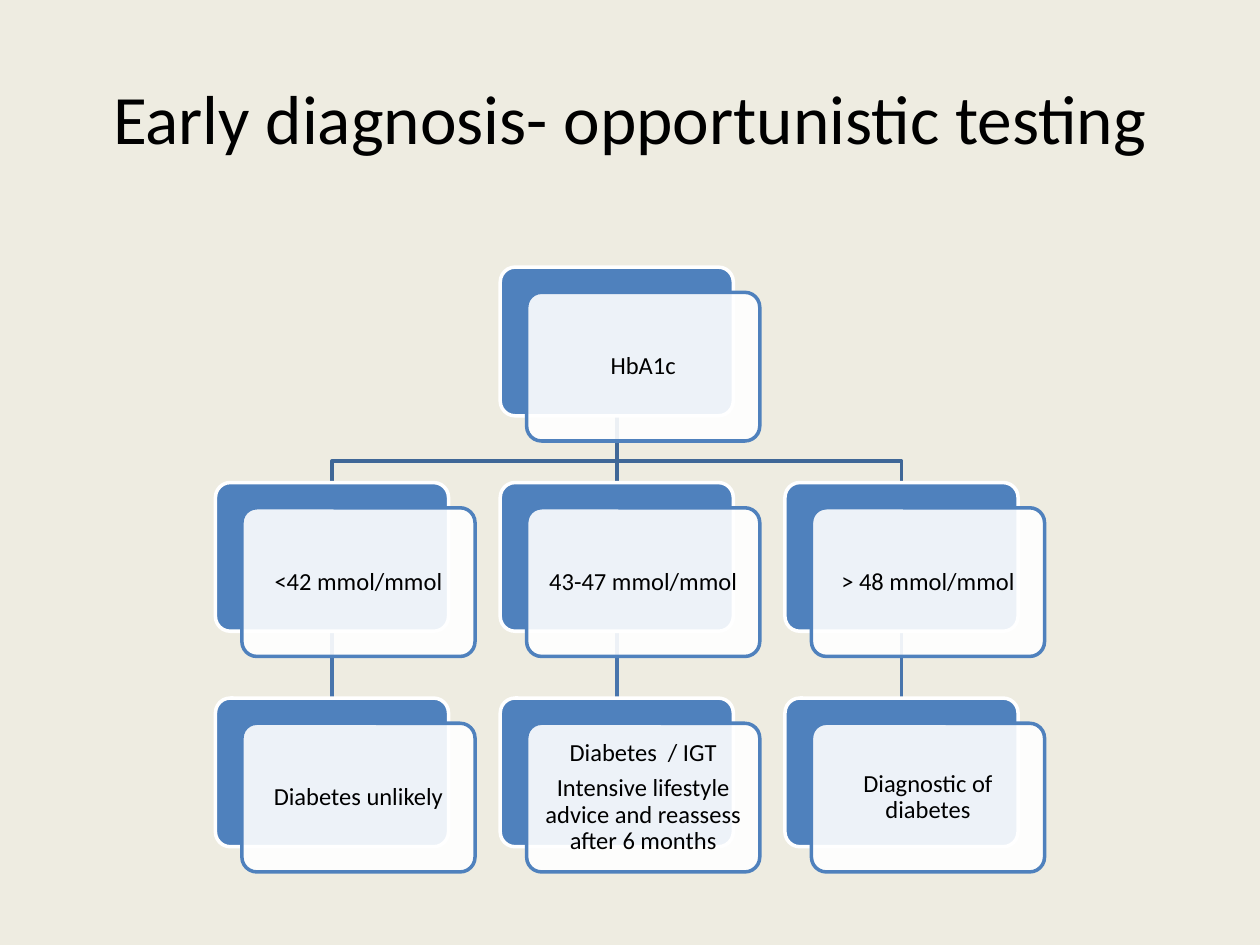
from pptx import Presentation
from pptx.dml.color import RGBColor
from pptx.enum.shapes import MSO_CONNECTOR, MSO_SHAPE
from pptx.enum.text import MSO_ANCHOR, PP_ALIGN
from pptx.oxml.ns import qn
from pptx.util import Inches, Pt
from lxml import etree

ROUNDED = MSO_SHAPE.ROUNDED_RECTANGLE
STRAIGHT = MSO_CONNECTOR.STRAIGHT
MIDDLE = MSO_ANCHOR.MIDDLE
CENTER = PP_ALIGN.CENTER

FONT = "Calibri"
BLUE, WHITE, BLACK = "4F81BD", "FFFFFF", "000000"
ROOT_LINE, BRANCH_LINE = "3F6797", "4875AC"

# Tree grid, in inches
COL_STEP, ROW_STEP = 2.26, 1.71
CARD_W, CARD_H = 1.85, 1.18
SHIFT_X, SHIFT_Y = 0.21, 0.2
BEND = 0.17  # from the horizontal run down to the child card

ROOT = ["HbA1c"]
BRANCHES = [
    (["<42 mmol/mmol"], ["Diabetes unlikely"]),
    (["43-47 mmol/mmol"],
     ["Diabetes  / IGT",
      "Intensive lifestyle advice and reassess after 6 months"]),
    (["> 48 mmol/mmol"], ["Diagnostic of diabetes"]),
]


def color(value):
    return RGBColor.from_string(value)


def set_line(shape, value):
    shape.line.color.rgb = color(value)
    shape.line.width = Pt(2)


def write(shape, paragraphs, size, inset):
    tf = shape.text_frame
    tf.word_wrap = True
    tf.vertical_anchor = MIDDLE
    tf.margin_left = tf.margin_right = Inches(inset)
    tf.margin_top = tf.margin_bottom = Inches(inset)
    tf.text = "\n".join(paragraphs)
    for p in tf.paragraphs:
        p.alignment = CENTER
        font = p.runs[0].font
        font.name, font.size = FONT, Pt(size)
        font.color.rgb = color(BLACK)


def add_title(s, x, y, w, h):
    box = s.shapes.add_textbox(Inches(x), Inches(y), Inches(w), Inches(h))
    write(box, ["Early diagnosis- opportunistic testing"], 39.6, 0.1)


def add_panel(s, x, y, fill, line):
    panel = s.shapes.add_shape(
        ROUNDED, Inches(x), Inches(y), Inches(CARD_W), Inches(CARD_H))
    panel.adjustments[0] = 0.1
    panel.shadow.inherit = False
    panel.fill.solid()
    panel.fill.fore_color.rgb = color(fill)
    set_line(panel, line)
    return panel


def add_card(s, x, y, paragraphs):
    add_panel(s, x, y, BLUE, WHITE)
    front = add_panel(s, x + SHIFT_X, y + SHIFT_Y, WHITE, BLUE)
    # 90 % opaque front panel
    rgb = front.fill._xPr.find(".//" + qn("a:srgbClr"))
    etree.SubElement(rgb, qn("a:alpha"), val="90000")
    write(front, paragraphs, 14, 0.1)
    for p in front.text_frame.paragraphs:
        p.line_spacing = 0.9
        p.space_after = Pt(5)


def add_link(s, x1, y1, x2, y2, line):
    if x1 == x2:
        link = s.shapes.add_connector(
            STRAIGHT, Inches(x1), Inches(y1), Inches(x2), Inches(y2))
        etree.SubElement(link._element.spPr, qn("a:effectLst"))
    else:
        bend_y = y2 - BEND
        builder = s.shapes.build_freeform(Inches(x1), Inches(y1))
        builder.add_line_segments(
            [(Inches(x), Inches(y))
             for x, y in ((x1, bend_y), (x2, bend_y), (x2, y2))],
            close=False)
        link = builder.convert_to_shape()
        link.fill.background()
        link.shadow.inherit = False
    set_line(link, line)


def add_tree(s, left, top):
    xs = [left + i * COL_STEP for i in range(len(BRANCHES))]
    ys = [top + i * ROW_STEP for i in range(3)]
    root_x = xs[1]
    mid = CARD_W / 2

    # Links lie behind the cards
    for x in xs:
        add_link(s, root_x + mid, ys[0] + CARD_H, x + mid, ys[1], ROOT_LINE)
        add_link(s, x + mid, ys[1] + CARD_H, x + mid, ys[2], BRANCH_LINE)

    # Cards
    add_card(s, root_x, ys[0], ROOT)
    for x, branch in zip(xs, BRANCHES):
        for y, paragraphs in zip(ys[1:], branch):
            add_card(s, x, y, paragraphs)


def main():
    prs = Presentation()
    prs.slide_width, prs.slide_height = Inches(10), Inches(7.5)
    s = prs.slides.add_slide(prs.slide_layouts[6])
    s.background.fill.solid()
    s.background.fill.fore_color.rgb = color("EEECE1")
    add_title(s, 0.5, 0.3, 9, 1.25)
    add_tree(s, 1.71, 2.12)
    prs.save("out.pptx")


if __name__ == "__main__":
    main()
